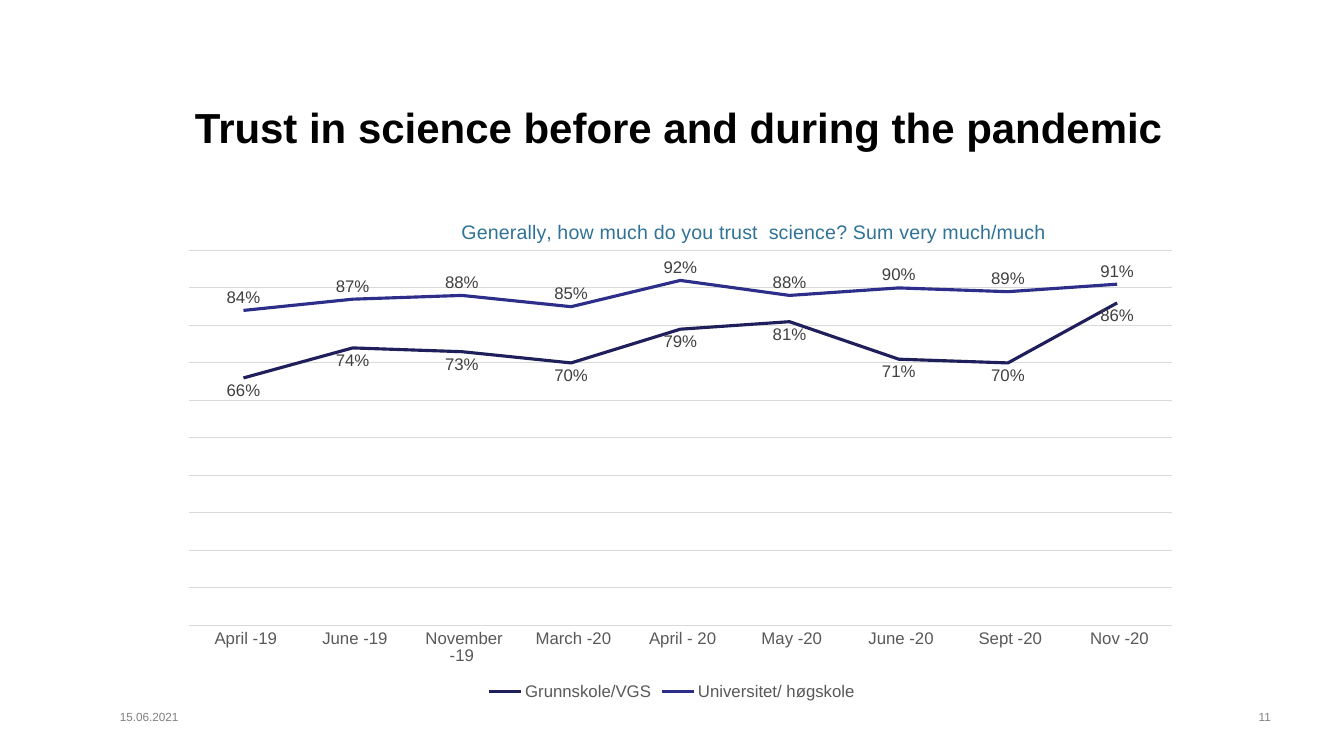
from lxml import etree
from pptx import Presentation
from pptx.chart.data import CategoryChartData
from pptx.dml.color import RGBColor
from pptx.enum.chart import XL_CHART_TYPE as ChartType, XL_LABEL_POSITION as LabelPos
from pptx.enum.chart import XL_LEGEND_POSITION as LegendPos, XL_TICK_MARK as Tick
from pptx.enum.text import MSO_ANCHOR as Anchor, MSO_AUTO_SIZE as AutoSize, PP_ALIGN as Align
from pptx.oxml.ns import qn
from pptx.util import Cm, Pt

MONTHS = ["April -19", "June -19", "November -19", "March -20", "April - 20",
          "May -20", "June -20", "Sept -20", "Nov -20"]
SERIES = [
    ("Grunnskole/VGS", "1F1F5C", LabelPos.BELOW,
     [0.66, 0.74, 0.73, 0.7, 0.79, 0.81, 0.71, 0.7, 0.86]),
    ("Universitet/ høgskole", "2D2D8A", LabelPos.ABOVE,
     [0.84, 0.87, 0.88, 0.85, 0.92, 0.88, 0.9, 0.89, 0.91]),
]


def rgb(value):
    return RGBColor.from_string(value)


class SlideBuilder:
    FONT = "Arial"
    BLACK, GREY, TEAL = "000000", "808080", "307397"
    AXIS_TEXT, LABEL_TEXT, GRID = "595959", "404040", "D9D9D9"

    def __init__(self, prs):
        self.slide = prs.slides.add_slide(prs.slide_layouts.get_by_name("Title Only"))

    def style_font(self, font, size, color, bold=False):
        font.name = self.FONT
        font.size = Pt(size)
        font.bold = bold
        font.color.rgb = rgb(color)

    def style_line(self, line, color, width):
        line.color.rgb = rgb(color)
        line.width = Pt(width)

    def fill_frame(self, tf, text, size, color, align, anchor, bold=False):
        tf.word_wrap = True
        tf.auto_size = AutoSize.NONE
        tf.vertical_anchor = anchor
        tf.margin_left = tf.margin_right = Cm(0.2)
        tf.margin_top = tf.margin_bottom = Cm(0.1)
        p = tf.paragraphs[0]
        p.alignment = align
        r = p.add_run()
        r.text = text
        self.style_font(r.font, size, color, bold)

    def title(self, text, left, top, width, height):
        sp = self.slide.shapes.title
        sp.left, sp.top, sp.width, sp.height = Cm(left), Cm(top), Cm(width), Cm(height)
        self.fill_frame(sp.text_frame, text, 30, self.BLACK, Align.CENTER, Anchor.MIDDLE, True)

    def footer(self, text, left, width, align):
        sp = self.slide.shapes.add_textbox(Cm(left), Cm(17.78), Cm(width), Cm(1.27))
        self.fill_frame(sp.text_frame, text, 8.4, self.GREY, align, Anchor.TOP)

    def place(self, parent, index, **values):
        for old in parent.findall(qn("c:layout")):
            parent.remove(old)
        layout = etree.Element(qn("c:layout"))
        manual = etree.SubElement(layout, qn("c:manualLayout"))
        for tag, value in values.items():
            etree.SubElement(manual, qn(f"c:{tag}")).set("val", str(value))
        parent.insert(index, layout)

    def line_chart(self, title, categories, series, left, top, width, height):
        data = CategoryChartData(number_format="0%")
        data.categories = categories
        for name, color, position, values in series:
            data.add_series(name, values)
        chart = self.slide.shapes.add_chart(
            ChartType.LINE, Cm(left), Cm(top), Cm(width), Cm(height), data).chart
        self.style_font(chart.font, 10, self.BLACK)

        chart.has_title = True
        r = chart.chart_title.text_frame.paragraphs[0].add_run()
        r.text = title
        self.style_font(r.font, 14, self.TEAL)
        chart.chart_title.include_in_layout = False
        self.place(chart.chart_title._element, 1, xMode="edge", yMode="edge", x=0.33, y=0.05)
        plot = chart.plots[0]
        plot.vary_by_categories = False
        self.place(chart._chartSpace.chart.plotArea, 0, layoutTarget="inner", xMode="edge",
                   yMode="edge", x=0.117, y=0.118, w=0.779, h=0.728)

        axis = chart.category_axis
        axis.major_tick_mark = axis.minor_tick_mark = Tick.NONE
        self.style_font(axis.tick_labels.font, 12, self.AXIS_TEXT)
        self.style_line(axis.format.line, self.GRID, 0.75)
        scale = chart.value_axis
        scale.minimum_scale, scale.maximum_scale, scale.major_unit = 0, 1, 0.1
        scale.has_major_gridlines = True
        self.style_line(scale.major_gridlines.format.line, self.GRID, 0.75)
        scale.visible = False

        chart.has_legend = True
        chart.legend.position = LegendPos.BOTTOM
        chart.legend.include_in_layout = False
        self.style_font(chart.legend.font, 12, self.AXIS_TEXT)

        for line, (name, color, position, values) in zip(plot.series, series):
            line.smooth = False
            self.style_line(line.format.line, color, 2.25)
            labels = line.data_labels
            labels.show_value = True
            labels.number_format = "0%"
            labels.number_format_is_linked = False
            labels.position = position
            self.style_font(labels.font, 12, self.LABEL_TEXT)


def main():
    prs = Presentation()
    prs.slide_width, prs.slide_height = Cm(33.87), Cm(19.05)
    builder = SlideBuilder(prs)
    builder.title("Trust in science before and during the pandemic", 2.08, 1.6, 30.07, 3.18)
    builder.footer("15.06.2021", 2.82, 7.06, Align.LEFT)
    builder.footer("11", 29.69, 2.54, Align.RIGHT)
    builder.line_chart("Generally, how much do you trust  science? Sum very much/much",
                       [f" {month}" for month in MONTHS], SERIES, 1.04, 4.78, 31.8, 12.98)
    prs.save("out.pptx")


if __name__ == "__main__":
    main()
